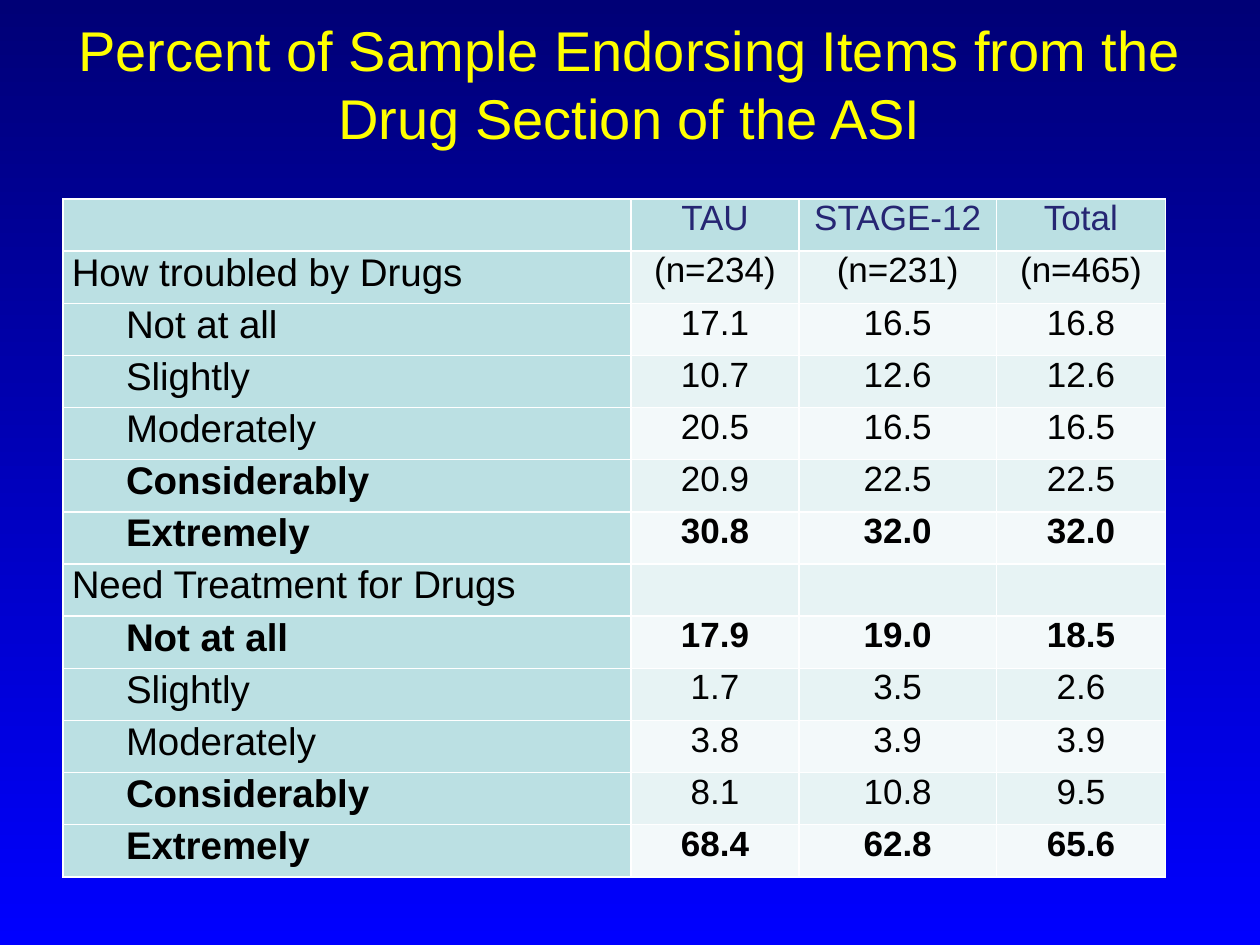
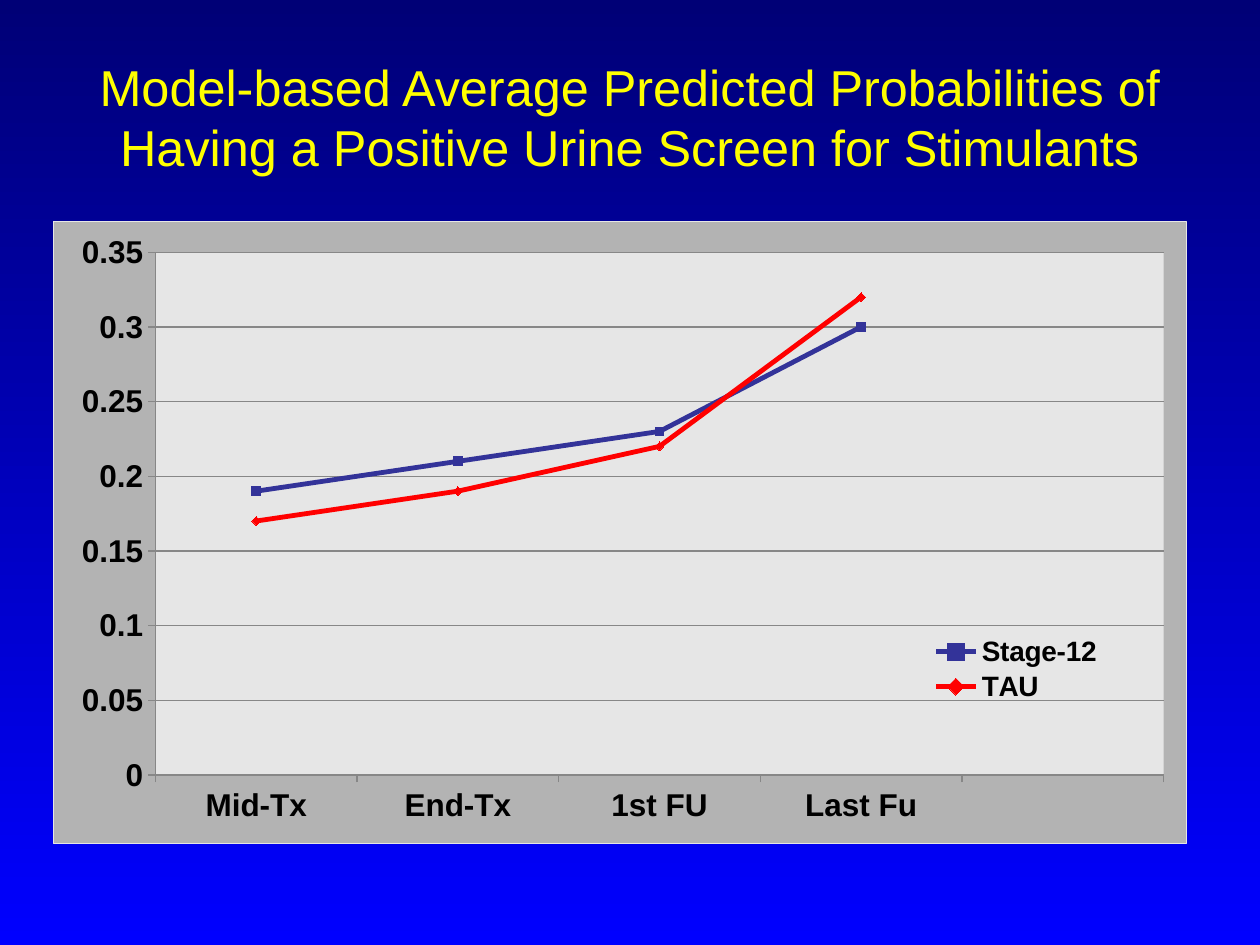
from typing import NamedTuple

import pptx
import pptx.chart.data
import pptx.dml.color
import pptx.enum.chart
import pptx.enum.text
import pptx.oxml
import pptx.oxml.ns
import pptx.util
from pptx.dml.color import RGBColor
from pptx.util import Inches, Pt

FONT = "Arial"
BACKGROUND_TOP = RGBColor(0x00, 0x00, 0x76)
BACKGROUND_BOTTOM = RGBColor(0x00, 0x00, 0xFF)
YELLOW = RGBColor(0xFF, 0xFF, 0x00)
BLACK = RGBColor(0x00, 0x00, 0x00)
WHITE = RGBColor(0xFF, 0xFF, 0xFF)
HEADER_TEXT = RGBColor(0x26, 0x26, 0x73)
HEADER_FILL = RGBColor(0xBB, 0xE0, 0xE3)
BAND_FILLS = (RGBColor(0xF3, 0xF9, 0xFA), RGBColor(0xE7, 0xF3, 0xF4))
CHART_FILL = RGBColor(0xB3, 0xB3, 0xB3)
PLOT_FILL = RGBColor(0xE6, 0xE6, 0xE6)
AXIS_GRAY = RGBColor(0x87, 0x87, 0x87)
NAVY = RGBColor(0x33, 0x33, 0x99)
RED = RGBColor(0xFF, 0x00, 0x00)

COLUMN_WIDTHS = (4.51, 1.33, 1.57, 1.34)
COLUMN_HEADERS = ("", "TAU", "STAGE-12", "Total")


class Item(NamedTuple):
    label: str
    values: tuple[str, str, str]
    indent: float = 0.43
    bold_label: bool = False
    bold_values: bool = False


class ProbabilitySeries(NamedTuple):
    name: str
    values: tuple[float | None, ...]
    color: RGBColor
    marker: pptx.enum.chart.XL_MARKER_STYLE


ITEMS = (
    Item("How troubled by Drugs", ("(n=234)", "(n=231)", "(n=465)"), indent=0),
    Item("Not at all", ("17.1", "16.5", "16.8")),
    Item("Slightly", ("10.7", "12.6", "12.6")),
    Item("Moderately", ("20.5", "16.5", "16.5")),
    Item("Considerably", ("20.9", "22.5", "22.5"), bold_label=True),
    Item("Extremely", ("30.8", "32.0", "32.0"), bold_label=True, bold_values=True),
    Item("Need Treatment for Drugs", ("", "", ""), indent=0),
    Item("Not at all", ("17.9", "19.0", "18.5"), bold_label=True, bold_values=True),
    Item("Slightly", ("1.7", "3.5", "2.6")),
    Item("Moderately", ("3.8", "3.9", "3.9")),
    Item("Considerably", ("8.1", "10.8", "9.5"), bold_label=True),
    Item("Extremely", ("68.4", "62.8", "65.6"), bold_label=True, bold_values=True),
)

TIME_POINTS = ("Mid-Tx", "End-Tx", "1st FU", "Last Fu", "")
SERIES = (
    ProbabilitySeries("Stage-12", (0.19, 0.21, 0.23, 0.3, None), NAVY,
                      pptx.enum.chart.XL_MARKER_STYLE.SQUARE),
    ProbabilitySeries("TAU", (0.17, 0.19, 0.22, 0.32, None), RED,
                      pptx.enum.chart.XL_MARKER_STYLE.DIAMOND),
)


def style_font(font, size: float, color: RGBColor, bold: bool = False) -> None:
    font.name = FONT
    font.size = Pt(size)
    font.bold = bold
    font.color.rgb = color


def set_background(master) -> None:
    fill = master.background.fill
    fill.gradient()
    fill.gradient_angle = 270
    for stop, color in zip(fill.gradient_stops, (BACKGROUND_TOP, BACKGROUND_BOTTOM)):
        stop.color.rgb = color


def add_titled_slide(presentation, title: str, size: float, bottom_margin: float = 0.05):
    slide = presentation.slides.add_slide(presentation.slide_layouts[6])
    text_box = slide.shapes.add_textbox(Inches(0.5), Inches(0.3), Inches(9), Inches(1.25))
    text_frame = text_box.text_frame
    text_frame.word_wrap = True
    text_frame.vertical_anchor = pptx.enum.text.MSO_ANCHOR.MIDDLE
    text_frame.margin_bottom = Inches(bottom_margin)
    text_frame.text = title
    paragraph = text_frame.paragraphs[0]
    paragraph.alignment = pptx.enum.text.PP_ALIGN.CENTER
    style_font(paragraph.runs[0].font, size, YELLOW)
    return slide


def set_borders(cell) -> None:
    properties = cell._tc.get_or_add_tcPr()
    for position, side in enumerate(("lnL", "lnR", "lnT", "lnB")):
        properties.insert(position, pptx.oxml.parse_xml(
            f'<a:{side} {pptx.oxml.ns.nsdecls("a")} w="12700"><a:solidFill>'
            f'<a:srgbClr val="{WHITE}"/></a:solidFill></a:{side}>'))


def fill_cell(cell, text: str, fill: RGBColor, size: float = 20, color: RGBColor = BLACK,
              bold: bool = False, centered: bool = True, indent: float = 0) -> None:
    cell.margin_left = Inches(0.07 + indent)
    cell.margin_right = Inches(0.07)
    cell.margin_top = cell.margin_bottom = 0
    cell.fill.solid()
    cell.fill.fore_color.rgb = fill
    set_borders(cell)
    cell.text_frame.text = text
    paragraph = cell.text_frame.paragraphs[0]
    if centered:
        paragraph.alignment = pptx.enum.text.PP_ALIGN.CENTER
    for run in paragraph.runs:
        style_font(run.font, size, color, bold)


def add_item_table(slide) -> None:
    table = slide.shapes.add_table(
        len(ITEMS) + 1, len(COLUMN_WIDTHS),
        Inches(0.5), Inches(1.58), Inches(sum(COLUMN_WIDTHS)), Inches(5.38)).table
    for column, width in zip(table.columns, COLUMN_WIDTHS):
        column.width = Inches(width)
    for column_index, header in enumerate(COLUMN_HEADERS):
        fill_cell(table.cell(0, column_index), header, HEADER_FILL, color=HEADER_TEXT)
    for row_index, item in enumerate(ITEMS, start=1):
        fill_cell(table.cell(row_index, 0), item.label, HEADER_FILL, size=22,
                  bold=item.bold_label, centered=False, indent=item.indent)
        for column_index, value in enumerate(item.values, start=1):
            fill_cell(table.cell(row_index, column_index), value,
                      BAND_FILLS[row_index % 2], bold=item.bold_values)


def set_layout(element, position: int, target: str, **fractions: float) -> None:
    """Place a chart part at fractions of the chart's width and height."""
    for layout in element.findall(pptx.oxml.ns.qn("c:layout")):
        element.remove(layout)
    inner = f'<c:layoutTarget val="{target}"/>' if target else ""
    modes = "".join(f'<c:{key}Mode val="edge"/>' for key in ("x", "y"))
    sizes = "".join(f'<c:{key} val="{value}"/>' for key, value in fractions.items())
    element.insert(position, pptx.oxml.parse_xml(
        f'<c:layout {pptx.oxml.ns.nsdecls("c")}><c:manualLayout>'
        f'{inner}{modes}{sizes}</c:manualLayout></c:layout>'))


def area_properties(fill: RGBColor, line: str):
    return pptx.oxml.parse_xml(
        f'<c:spPr {pptx.oxml.ns.nsdecls("c", "a")}><a:solidFill><a:srgbClr val="{fill}"/>'
        f'</a:solidFill>{line}</c:spPr>')


def style_axis(axis) -> None:
    style_font(axis.tick_labels.font, 18, BLACK, bold=True)
    axis.major_tick_mark = pptx.enum.chart.XL_TICK_MARK.OUTSIDE
    axis.minor_tick_mark = pptx.enum.chart.XL_TICK_MARK.NONE
    axis.format.line.color.rgb = AXIS_GRAY
    axis.format.line.width = Pt(0.75)


def style_legend(chart) -> None:
    chart.has_legend = True
    legend = chart.legend
    legend.position = pptx.enum.chart.XL_LEGEND_POSITION.RIGHT
    legend.include_in_layout = False
    style_font(legend.font, 16, BLACK, bold=True)
    set_layout(legend._element, 1, "", x=0.77, y=0.66, w=0.16, h=0.12)


def style_series(series, style: ProbabilitySeries) -> None:
    series.smooth = False
    series.format.line.color.rgb = style.color
    series.format.line.width = Pt(2.75)
    series.marker.style = style.marker
    series.marker.size = 5
    series.marker.format.fill.solid()
    series.marker.format.fill.fore_color.rgb = style.color
    series.marker.format.line.color.rgb = style.color


def add_probability_chart(slide) -> None:
    chart_data = pptx.chart.data.CategoryChartData(number_format="General")
    chart_data.categories = TIME_POINTS
    for style in SERIES:
        chart_data.add_series(style.name, style.values)
    chart = slide.shapes.add_chart(
        pptx.enum.chart.XL_CHART_TYPE.LINE_MARKERS,
        Inches(0.42), Inches(1.75), Inches(9), Inches(4.95), chart_data).chart
    chart.has_title = False
    style_font(chart.font, 18, BLACK)
    chart.plots[0].vary_by_categories = False
    for series, style in zip(chart.plots[0].series, SERIES):
        style_series(series, style)

    style_axis(chart.category_axis)
    value_axis = chart.value_axis
    style_axis(value_axis)
    value_axis.minimum_scale = 0
    value_axis.maximum_scale = 0.35
    value_axis.major_unit = 0.05
    value_axis.has_major_gridlines = True
    value_axis.major_gridlines.format.line.color.rgb = AXIS_GRAY
    value_axis.major_gridlines.format.line.width = Pt(0.75)
    style_legend(chart)

    chart_element = chart._chartSpace.find(pptx.oxml.ns.qn("c:chart"))
    plot_area = chart_element.find(pptx.oxml.ns.qn("c:plotArea"))
    set_layout(plot_area, 0, "inner", x=0.09, y=0.05, w=0.89, h=0.84)
    plot_area.append(area_properties(PLOT_FILL, "<a:ln><a:noFill/></a:ln>"))
    chart_element.addnext(area_properties(
        CHART_FILL,
        f'<a:ln w="9525"><a:solidFill><a:srgbClr val="{PLOT_FILL}"/></a:solidFill></a:ln>'))


def main() -> None:
    presentation = pptx.Presentation()
    presentation.slide_width = Inches(10)
    presentation.slide_height = Inches(7.5)
    set_background(presentation.slide_master)
    add_item_table(add_titled_slide(
        presentation, "Percent of Sample Endorsing Items from the Drug Section of the ASI",
        size=32, bottom_margin=0.58))
    add_probability_chart(add_titled_slide(
        presentation,
        "Model-based Average Predicted Probabilities of Having a Positive Urine Screen "
        "for Stimulants",
        size=28.8))
    presentation.save("out.pptx")


if __name__ == "__main__":
    main()
